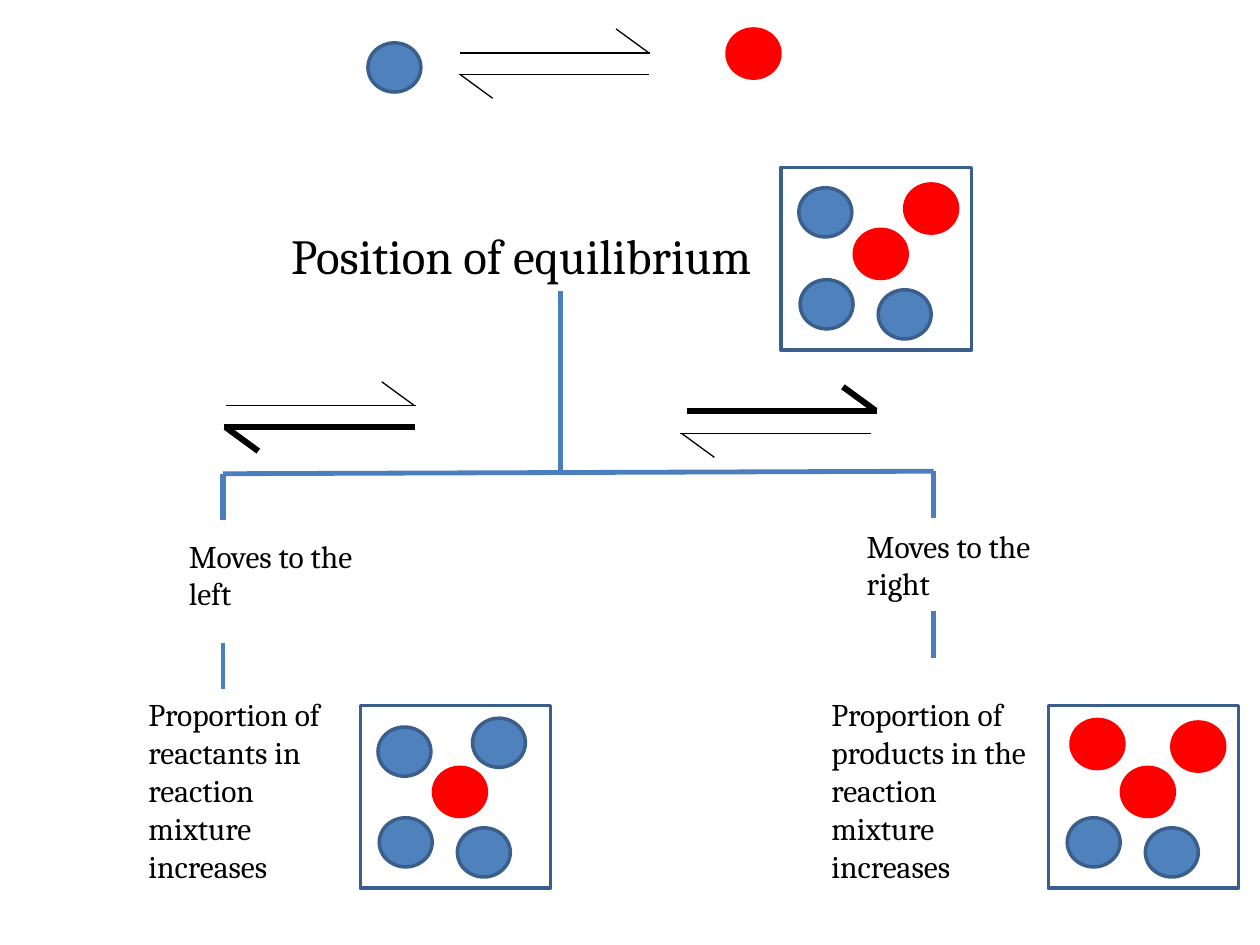
from dataclasses import dataclass

from lxml import etree
from pptx import Presentation
from pptx.dml.color import RGBColor
from pptx.enum.shapes import MSO_CONNECTOR, MSO_SHAPE
from pptx.enum.text import MSO_ANCHOR, MSO_AUTO_SIZE, PP_ALIGN
from pptx.oxml.ns import qn
from pptx.util import Pt

PX = 9144  # EMU per px, 100 px to the inch
STRAIGHT = MSO_CONNECTOR.STRAIGHT
OVAL, RECTANGLE = MSO_SHAPE.OVAL, MSO_SHAPE.RECTANGLE
LEFT, TOP, NO_FIT = PP_ALIGN.LEFT, MSO_ANCHOR.TOP, MSO_AUTO_SIZE.NONE


@dataclass(frozen=True)
class Theme:
    font: str = "Cambria"
    title_size: int = 28
    body_size: int = 18
    ink: str = "000000"
    branch: str = "4B7EBC"
    outline: str = "3A5F8C"
    reactant: str = "4F81BD"
    product: str = "FF0000"


theme = Theme()


def write(text, left, top, width, height, size=theme.body_size, holder=None):
    """Place text in a holder, or in a new text box."""
    box = [n * PX for n in (left, top, width, height)]
    if holder is None:
        holder = slide.shapes.add_textbox(*box)
    holder.left, holder.top, holder.width, holder.height = box
    frame = holder.text_frame
    frame.word_wrap = True
    frame.auto_size = NO_FIT
    frame.vertical_anchor = TOP
    paragraph = frame.paragraphs[0]
    paragraph.text = text
    paragraph.alignment = LEFT
    paragraph.font.name = theme.font
    paragraph.font.size = Pt(size)
    paragraph.font.color.rgb = RGBColor.from_string(theme.ink)


def draw_line(x1, y1, x2, y2, color, weight):
    connector = slide.shapes.add_connector(
        STRAIGHT, *[n * PX for n in (x1, y1, x2, y2)])
    connector.line.color.rgb = RGBColor.from_string(color)
    connector.line.width = Pt(weight)
    etree.SubElement(connector._element.spPr, qn("a:effectLst"))


presentation = Presentation()
presentation.slide_width, presentation.slide_height = 1000 * PX, 750 * PX
slide = presentation.slides.add_slide(presentation.slide_layouts[5])

# Title
write("Position of equilibrium", 221, 174, 467, 57,
      size=theme.title_size, holder=slide.shapes.title)

# Branches of the tree
for x1, y1, x2, y2, weight in [
    (445, 231, 445, 375, 2.75),
    (177, 376, 741, 374, 2.75),
    (177, 376, 177, 413, 3),
    (741, 374, 741, 411, 3),
    (177, 510, 177, 547, 2.75),
    (741, 485, 741, 522, 2.75),
]:
    draw_line(x1, y1, x2, y2, theme.branch, weight)

# Shifts and their effects
for text, left, top, width, height in [
    ("Moves to the left", 140, 421, 172, 71),
    ("Moves to the right", 678, 413, 172, 71),
    ("Proportion of reactants in reaction mixture increases",
     108, 547, 172, 162),
    ("Proportion of products in the reaction mixture increases",
     650, 547, 187, 162),
]:
    write(text, left, top, width, height)

# Equilibrium half-arrows: tip, direction (1 forward, -1 back), weight
for tip_x, tip_y, way, weight in [
    (516, 42, 1, 0.75), (364, 59, -1, 0.75),
    (330, 322, 1, 0.75), (178, 339, -1, 3.5),
    (696, 326, 1, 3.5), (540, 344, -1, 0.75),
]:
    draw_line(tip_x - 151 * way, tip_y, tip_x, tip_y, theme.ink, weight)
    draw_line(tip_x - way, tip_y, tip_x - 27 * way, tip_y - 19 * way,
              theme.ink, weight)

# Mixtures: box corner, then reactants and products besides the shared ones
shared_reactants, shared_products = [(15, 89), (77, 97)], [(58, 49)]
mixtures = [
    (620, 133, [(14, 16)], [(98, 13)]),
    (286, 560, [(14, 17), (89, 10)], []),
    (832, 560, [], [(98, 13), (18, 11)]),
]
molecules = [(292, 34, theme.reactant), (577, 23, theme.product)]
figures = []
for left, top, reactants, products in mixtures:
    figures.append((RECTANGLE, left, top, 151, 145, None))
    for color, spots in [(theme.reactant, shared_reactants + reactants),
                         (theme.product, shared_products + products)]:
        molecules += [(left + dx, top + dy, color) for dx, dy in spots]
figures += [(OVAL, x, y, 42, 39, color) for x, y, color in molecules]

for kind, left, top, width, height, color in figures:
    figure = slide.shapes.add_shape(
        kind, *[n * PX for n in (left, top, width, height)])
    figure.shadow.inherit = False
    if color is None:
        figure.fill.background()
    else:
        figure.fill.solid()
        figure.fill.fore_color.rgb = RGBColor.from_string(color)
    edge = theme.product if color == theme.product else theme.outline
    figure.line.color.rgb = RGBColor.from_string(edge)
    figure.line.width = Pt(2)

presentation.save("out.pptx")
